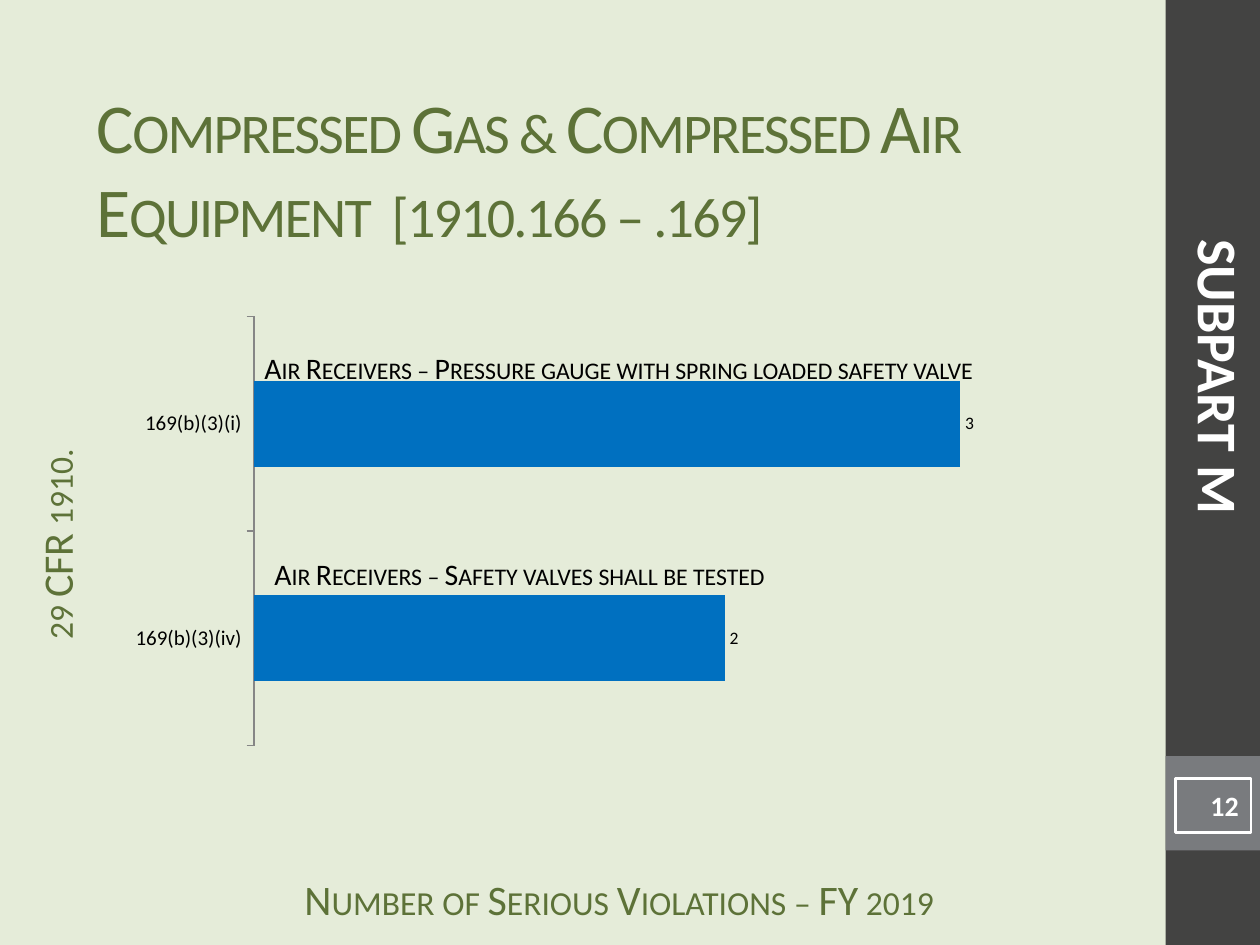
from pptx import Presentation
from pptx.chart.data import CategoryChartData
from pptx.dml.color import RGBColor
from pptx.enum import chart as ch, shapes, text
from pptx.util import Inches, Pt

SAGE = RGBColor(0xE5, 0xEC, 0xD9)
GREEN = RGBColor(0x5D, 0x72, 0x38)
DARK = RGBColor(0x43, 0x43, 0x42)
GRAY = RGBColor(0x79, 0x7B, 0x7E)
AXIS = RGBColor(0x86, 0x86, 0x86)
BLUE = RGBColor(0x00, 0x70, 0xC0)
WHITE = RGBColor(0xFF, 0xFF, 0xFF)
BLACK = RGBColor(0, 0, 0)
FONT = "Calibri"
LEFT, MID, RIGHT = text.PP_ALIGN.LEFT, text.PP_ALIGN.CENTER, text.PP_ALIGN.RIGHT

prs = Presentation()
prs.slide_width, prs.slide_height = Inches(10), Inches(7.5)
slide = prs.slides.add_slide(prs.slide_layouts[6])
slide.background.fill.solid()
slide.background.fill.fore_color.rgb = SAGE


def write(shape, words, size, color, align=LEFT, bold=False, caps=False):
    """Put one formatted run into a shape."""
    para = shape.text_frame.paragraphs[0]
    para.alignment = align
    run = para.add_run()
    run.text = words
    for key, val in {"name": FONT, "size": Pt(size), "bold": bold}.items():
        setattr(run.font, key, val)
    run.font.color.rgb = color
    if caps:
        run.font._element.set("cap", "small")
    return run


def add_rect(box, fill=None):
    """Add a plain rectangle, filled or empty."""
    rect = slide.shapes.add_shape(
        shapes.MSO_SHAPE.RECTANGLE, *[Inches(n) for n in box])
    rect.shadow.inherit = False
    rect.line.fill.background()
    if fill is None:
        rect.fill.background()
    else:
        rect.fill.solid()
        rect.fill.fore_color.rgb = fill
    return rect


# Side band
add_rect((9.25, 0, 0.75, 7.5), DARK)
add_rect((9.25, 6, 0.75, 0.75), GRAY)

# Bar chart
data = CategoryChartData()
data.categories = ["169(b)(3)(iv)", "169(b)(3)(i)"]
data.add_series("Series 1", (2, 3))
chart = slide.shapes.add_chart(
    ch.XL_CHART_TYPE.BAR_CLUSTERED, Inches(0.92), Inches(2.44),
    Inches(7.79), Inches(3.55), data).chart
chart.has_legend = chart.has_title = False
for key, val in {"name": FONT, "size": Pt(10)}.items():
    setattr(chart.font, key, val)
chart.font.color.rgb = BLACK

cat = chart.category_axis
cat.major_tick_mark = ch.XL_TICK_MARK.OUTSIDE
cat.has_major_gridlines = False
cat.tick_labels.font.size = Pt(12)
cat.format.line.color.rgb = AXIS
val_axis = chart.value_axis
for key, val in {"minimum_scale": 0, "maximum_scale": 3.5,
                 "has_major_gridlines": False, "visible": False}.items():
    setattr(val_axis, key, val)

plot = chart.plots[0]
plot.gap_width = 150
plot.vary_by_categories = False
bars = plot.series[0]
bars.format.fill.solid()
bars.format.fill.fore_color.rgb = BLUE
bars.data_labels.show_value = True
bars.data_labels.position = ch.XL_LABEL_POSITION.OUTSIDE_END

# Page number
page = add_rect((9.33, 6.18, 0.6, 0.43))
page.line.color.rgb = WHITE
page.line.width = Pt(1.5)
write(page, "12", 16, WHITE, RIGHT, bold=True)

# Title, axis captions, bar captions and side heading:
# box, words, size, colour, align, turn, wrap, top inset, anchor
TOP, CENTER = text.MSO_ANCHOR.TOP, text.MSO_ANCHOR.MIDDLE
labels = [
    ((0.67, 0.58, 8.56, 1.5),
     "Compressed Gas & Compressed Air Equipment  [1910.166 – .169]",
     40, GREEN, LEFT, 0, True, 0.05, CENTER),
    ((2.08, 6.93, 5.67, 0.33), "Number of Serious Violations – FY 2019",
     24, GREEN, MID, 0, True, 0, TOP),
    ((-1.56, 4.03, 4.19, 0.58), "29 CFR 1910.",
     24, GREEN, MID, 270, True, 0, TOP),
    ((2, 2.73, 6.03, 0.39),
     "Air Receivers – Pressure gauge with spring loaded safety valve",
     17, BLACK, LEFT, 0, False, 0.05, TOP),
    ((2.08, 4.36, 4.24, 0.39), "Air Receivers – Safety valves shall be tested",
     17, BLACK, LEFT, 0, False, 0.05, TOP),
    ((6.69, 2.67, 5.98, 0.64), "SUBPART M",
     32, WHITE, MID, 90, True, 0.05, TOP),
]
for box, words, size, color, align, turn, wrap, inset, anchor in labels:
    label = slide.shapes.add_textbox(*[Inches(n) for n in box])
    label.rotation = turn
    for key, val in {"word_wrap": wrap, "margin_top": Inches(inset),
                     "vertical_anchor": anchor}.items():
        setattr(label.text_frame, key, val)
    side = color == WHITE
    run = write(label, words, size, color, align, bold=side, caps=not side)
    if size == 40:
        run.font._element.set("spc", "-100")

prs.save("out.pptx")
